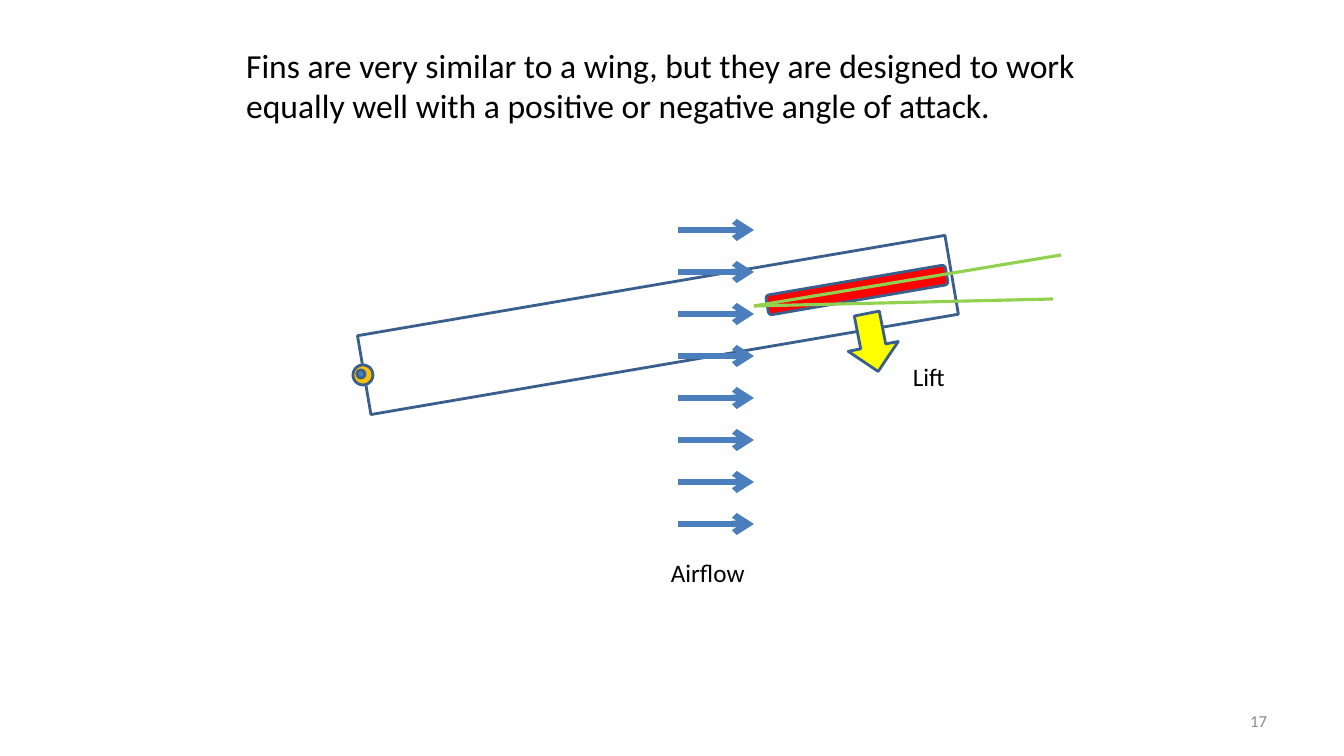
from dataclasses import dataclass

from lxml import etree
from pptx import Presentation
from pptx import util as u
from pptx.dml.color import RGBColor
from pptx.enum import shapes, text
from pptx.oxml.ns import qn

SCALE = 914400 / 100.8  # EMU in one px
SHAPE = shapes.MSO_SHAPE


@dataclass(frozen=True)
class Theme:
    font: str = "Calibri"
    title_size: int = 24
    label_size: int = 18
    number_size: int = 12
    ink: str = "000000"
    muted: str = "8C8C8C"
    outline: str = "3A5F8C"
    fin: str = "FF0000"
    pivot: str = "FFC000"
    pivot_core: str = "4F81BD"
    lift: str = "FFFF00"
    angle: str = "92D050"
    flow: str = "4B7EBC"
    outline_width: float = 2
    angle_width: float = 2.25
    flow_width: float = 4.5


THEME = Theme()


def px(*lengths):
    return [u.Emu(round(length * SCALE)) for length in lengths]


def rgb(colour):
    return RGBColor.from_string(colour)


def write(holder, words, size=THEME.label_size, colour=THEME.ink,
          align=text.PP_ALIGN.LEFT, anchor=text.MSO_ANCHOR.TOP,
          fit=text.MSO_AUTO_SIZE.NONE):
    frame = holder.text_frame
    frame.word_wrap = True
    frame.auto_size = fit
    frame.vertical_anchor = anchor
    paragraph = frame.paragraphs[0]
    paragraph.alignment = align
    run = paragraph.add_run()
    run.text = words
    run.font.name = THEME.font
    run.font.size = u.Pt(size)
    run.font.color.rgb = rgb(colour)


def label(parent, words, box, **style):
    write(parent.add_textbox(*px(*box)), words, **style)


def part(parent, kind, box, fill=None, rotation=0):
    shape = parent.add_shape(kind, *px(*box))
    shape.shadow.inherit = False
    shape.rotation = rotation
    if fill:
        shape.fill.solid()
        shape.fill.fore_color.rgb = rgb(fill)
    else:
        shape.fill.background()
    shape.line.color.rgb = rgb(THEME.outline)
    shape.line.width = u.Pt(THEME.outline_width)


def line(parent, start, end, colour, width, arrow=False):
    connector = parent.add_connector(
        shapes.MSO_CONNECTOR.STRAIGHT, *px(*start, *end))
    connector.line.color.rgb = rgb(colour)
    connector.line.width = u.Pt(width)
    properties = connector._element.spPr
    if arrow:
        etree.SubElement(properties.find(qn("a:ln")), qn("a:tailEnd"), type="arrow")
    etree.SubElement(properties, qn("a:effectLst"))


def heading(slide, box):
    title = slide.shapes.title
    title.left, title.top, title.width, title.height = px(*box)
    write(title, "Fins are very similar to a wing, but they are designed to work "
          "equally well with a positive or negative angle of attack.",
          size=THEME.title_size)


def rocket(slide, box):
    """Tilted body with its fin, and the pivot at the nose end."""
    x, y, width, height = box
    tilt = 350.3
    group = slide.shapes.add_group_shape().shapes
    part(group, SHAPE.RECTANGLE, box, rotation=tilt)
    part(group, SHAPE.ROUNDED_RECTANGLE, (x + width - 190, y - 5, 182, 20),
         THEME.fin, tilt)
    part(group, SHAPE.OVAL, (x - 7, y + height, 20, 20), THEME.pivot, tilt)


def airflow(slide, box, count=8):
    x, y, width, height = box
    group = slide.shapes.add_group_shape().shapes
    for index in range(count):
        level = y + index * height / (count - 1)
        line(group, (x, level), (x + width, level),
             THEME.flow, THEME.flow_width, arrow=True)
    label(slide.shapes, "Airflow", (x - 17, y + height + 28, 127, 40),
          fit=text.MSO_AUTO_SIZE.SHAPE_TO_FIT_TEXT)


def fin_forces(slide, box):
    """Angle of attack opening from the fin's leading edge, and the lift."""
    x, y, width, height = box
    edge = (x, y + height)
    part(slide.shapes, SHAPE.OVAL, (x - 397, y + 115, 8, 8), THEME.pivot_core)
    for end in ((x + width - 8, y + 44), (x + width, y)):
        line(slide.shapes, edge, end, THEME.angle, THEME.angle_width)
    part(slide.shapes, SHAPE.DOWN_ARROW, (x + 93, y + 58, 51, 59),
         THEME.lift, 348.9)
    label(slide.shapes, "Lift", (x + 149, y + 101, 130, 42),
          fit=text.MSO_AUTO_SIZE.SHAPE_TO_FIT_TEXT)


def page_number(slide, box):
    label(slide.shapes, "17", box, size=THEME.number_size, colour=THEME.muted,
          align=text.PP_ALIGN.RIGHT, anchor=text.MSO_ANCHOR.MIDDLE)


def main():
    deck = Presentation()
    deck.slide_width, deck.slide_height = px(1344, 756)
    slide = deck.slides.add_slide(deck.slide_layouts[5])
    heading(slide, (236, 40, 885, 92))
    rocket(slide, (360, 285, 596, 80))
    airflow(slide, (678, 230, 76, 294))
    fin_forces(slide, (754, 255, 307, 51))
    page_number(slide, (964, 701, 313, 40))
    deck.save("out.pptx")


if __name__ == "__main__":
    main()
